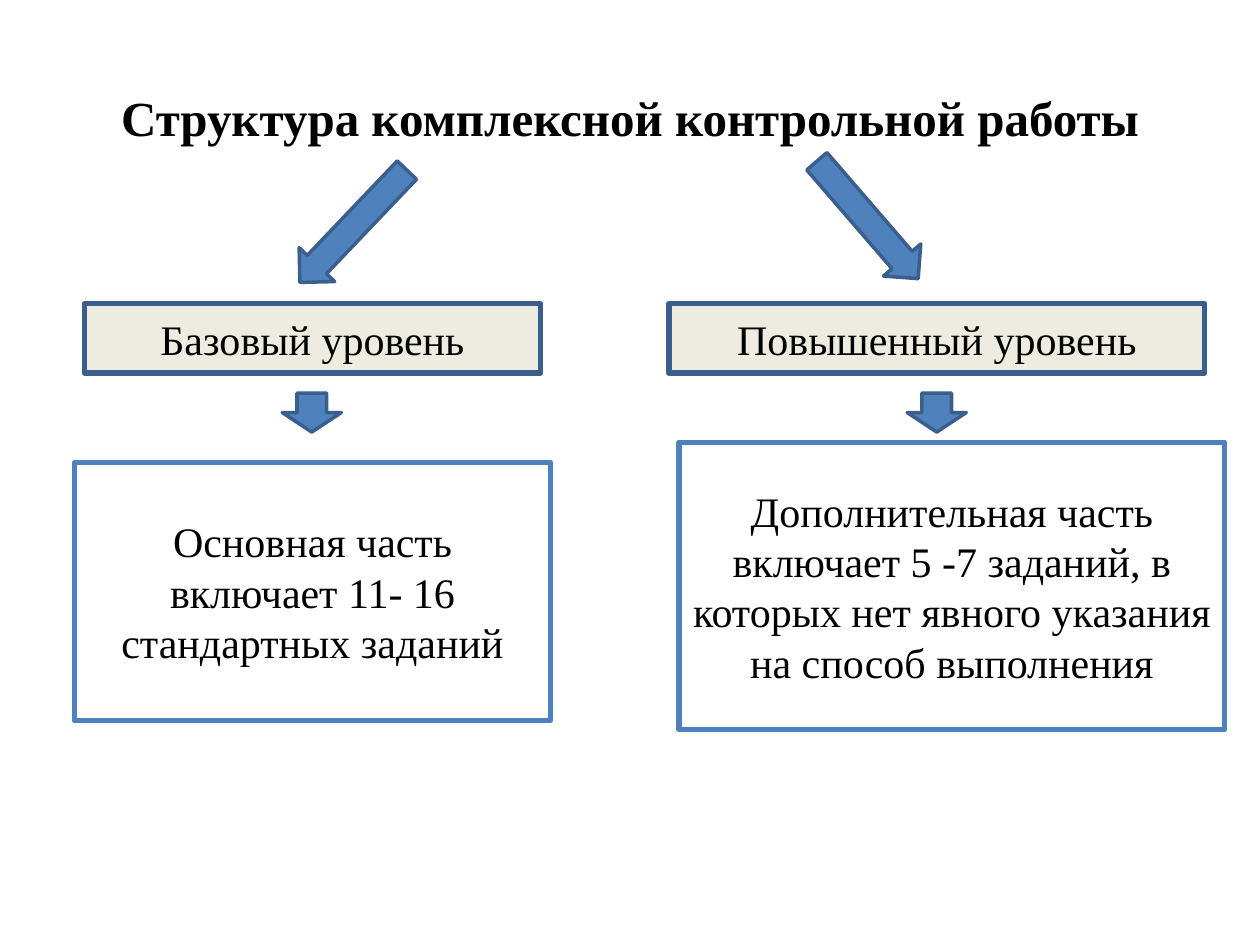
from pptx import Presentation
from pptx.dml.color import RGBColor
from pptx.enum.shapes import MSO_SHAPE as Shape
from pptx.enum.text import MSO_ANCHOR as Anchor, PP_ALIGN as Align
from pptx.util import Pt

BLACK = RGBColor(0x00, 0x00, 0x00)
WHITE = RGBColor(0xFF, 0xFF, 0xFF)
CREAM = RGBColor(0xEE, 0xEC, 0xE1)
BLUE = RGBColor(0x4F, 0x81, 0xBD)
DARK_BLUE = RGBColor(0x3A, 0x5F, 0x8C)
FONT = "Times New Roman"

LEVEL_TOP, LEVEL_HEIGHT = 173.5, 39.6


def set_text(s, text, size, bold=False):
    tf = s.text_frame
    tf.word_wrap = True
    tf.vertical_anchor = Anchor.MIDDLE
    tf.text = text
    p = tf.paragraphs[0]
    p.alignment = Align.CENTER
    font = p.runs[0].font
    font.name, font.size, font.bold = FONT, Pt(size), bold
    font.color.rgb = BLACK


def add_title(slide, text):
    s = slide.shapes.add_textbox(Pt(36), Pt(21.6), Pt(648), Pt(90))
    set_text(s, text, 28, bold=True)


def add_shape(slide, kind, box, fill, line, weight):
    s = slide.shapes.add_shape(kind, *(Pt(v) for v in box))
    s.shadow.inherit = False
    s.fill.solid()
    s.fill.fore_color.rgb = fill
    s.line.color.rgb = line
    s.line.width = Pt(weight)
    return s


def add_box(slide, text, box, fill, line):
    s = add_shape(slide, Shape.RECTANGLE, box, fill, line, 3)
    set_text(s, text, 24)


def add_arrow(slide, left, top, width, height, rotation=0):
    box = (left, top, width, height)
    s = add_shape(slide, Shape.DOWN_ARROW, box, BLUE, DARK_BLUE, 2)
    s.rotation = rotation
    return s


def add_level(slide, name, left, width, description, description_box):
    """Add a level heading with the box that describes it."""
    heading_box = (left, LEVEL_TOP, width, LEVEL_HEIGHT)
    add_box(slide, name, heading_box, CREAM, DARK_BLUE)
    add_box(slide, description, description_box, WHITE, BLUE)


def main():
    prs = Presentation()
    prs.slide_width, prs.slide_height = Pt(720), Pt(540)
    slide = prs.slides.add_slide(prs.slide_layouts[6])

    add_title(slide, "Структура комплексной контрольной работы")
    add_level(slide, "Базовый уровень", 48.2, 260.6,
              "Основная часть включает 11- 16 стандартных заданий",
              (42.5, 264.2, 272.2, 147.6))
    add_level(slide, "Повышенный уровень", 382.3, 306,
              "Дополнительная часть включает 5 -7 заданий, "
              "в которых нет явного указания на способ выполнения",
              (388.1, 252.7, 311.8, 164.2))

    for left in (161.3, 518.4):
        add_arrow(slide, left, 224.6, 33.8, 22.3)
    for left, top, rotation in ((187.9, 85, 43.6), (481.7, 81.4, 319.2)):
        s = add_arrow(slide, left, top, 28.1, 88.6, rotation)
        s.adjustments[0] = 0.54

    prs.save("out.pptx")


if __name__ == "__main__":
    main()
